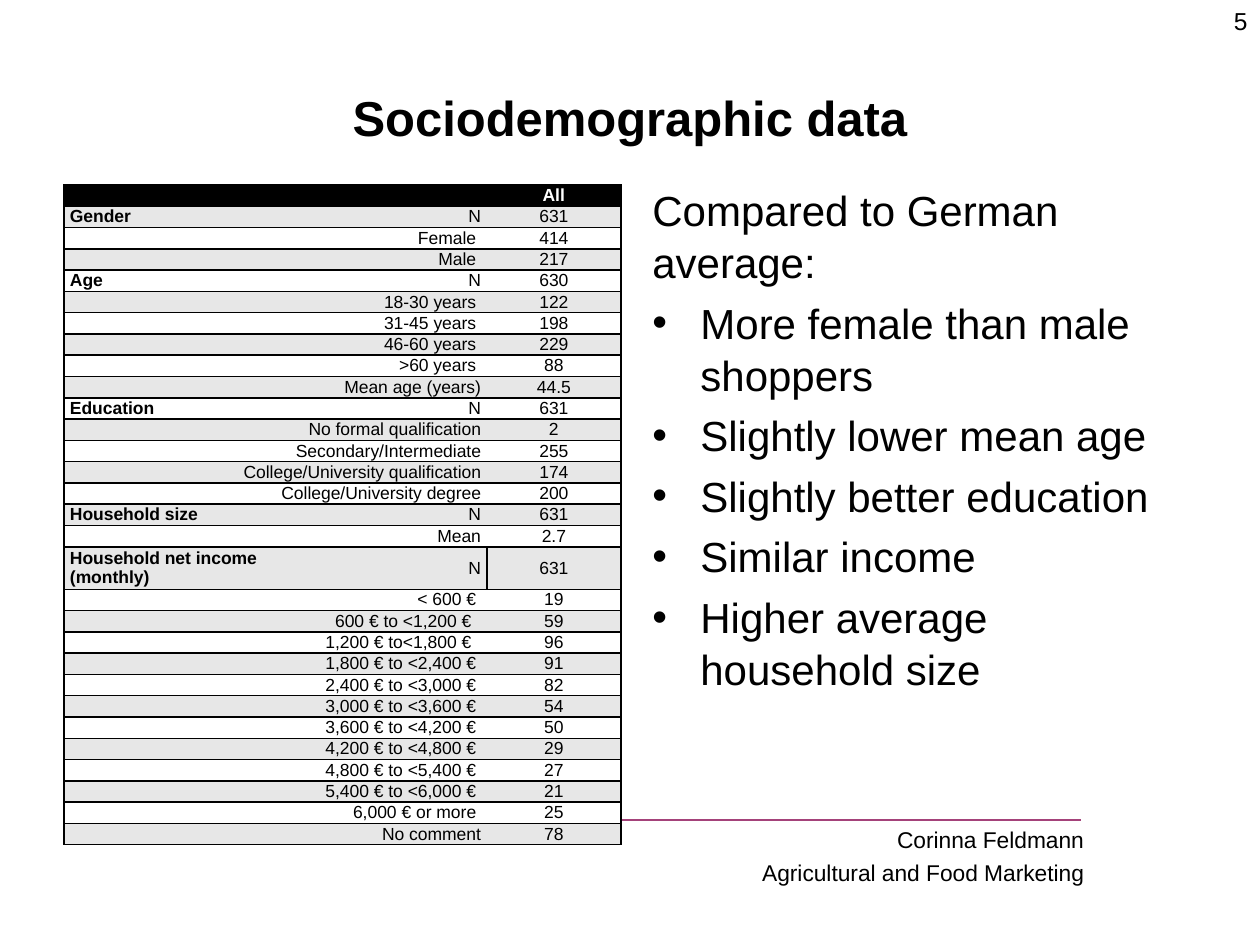
import lxml.etree
import pptx
import pptx.dml.color
import pptx.enum.shapes
import pptx.enum.text
import pptx.oxml.ns
import pptx.util

SCALE = 914400 / 126
NO_GRID = "{2D5ABB26-0587-4C30-8999-92F81FD0307C}"
ALIGN = {
    "l": pptx.enum.text.PP_ALIGN.LEFT,
    "c": pptx.enum.text.PP_ALIGN.CENTER,
    "r": pptx.enum.text.PP_ALIGN.RIGHT,
}
ANCHOR = {
    "t": pptx.enum.text.MSO_ANCHOR.TOP,
    "m": pptx.enum.text.MSO_ANCHOR.MIDDLE,
}

# Label, number of grid columns under the label, item, value
ROWS = [
    ("", 1, "", "All"),
    ("Gender", 1, "N", "631"),
    ("", 1, "Female ", "414"),
    ("", 1, "Male ", "217"),
    ("Age", 1, "N", "630"),
    ("", 1, "18-30 years ", "122"),
    ("", 1, "31-45 years ", "198"),
    ("", 1, "46-60 years ", "229"),
    ("", 1, ">60 years ", "88"),
    ("", 1, "Mean age (years)", "44.5"),
    ("Education", 2, "N", "631"),
    ("", 1, "No formal qualification", "2"),
    ("", 1, "Secondary/Intermediate", "255"),
    ("", 1, "College/University qualification", "174"),
    ("", 1, "College/University degree", "200"),
    ("Household size", 3, "N", "631"),
    ("", 2, "Mean", "2.7"),
    ("Household net income (monthly)", 4, "N", "631"),
    ("", 2, "< 600 € ", "19"),
    ("", 2, "600 € to <1,200 €  ", "59"),
    ("", 2, "1,200 € to<1,800 €  ", "96"),
    ("", 2, "1,800 € to <2,400 € ", "91"),
    ("", 2, "2,400 € to <3,000 € ", "82"),
    ("", 2, "3,000 € to <3,600 € ", "54"),
    ("", 2, "3,600 € to <4,200 € ", "50"),
    ("", 2, "4,200 € to <4,800 € ", "29"),
    ("", 2, "4,800 € to <5,400 € ", "27"),
    ("", 2, "5,400 € to <6,000 € ", "21"),
    ("", 2, "6,000 € or more ", "25"),
    ("", 2, "No comment", "78"),
]
COLS = [155, 36, 36, 36, 160, 134]
POINTS = [
    "More female than male shoppers",
    "Slightly lower mean age",
    "Slightly better education",
    "Similar income",
    "Higher average household size",
]


def px(n):
    return pptx.util.Emu(round(n * SCALE))


def tint(code):
    return pptx.dml.color.RGBColor.from_string(code)


def sub(parent, tag, **attrs):
    return lxml.etree.SubElement(parent, pptx.oxml.ns.qn(tag), attrs)


def write(para, text, size=10, bold=False, color="000000", face="Arial",
          align="l", before=0, lead=None, bullet=False):
    """Fill one paragraph with one formatted run."""
    if bullet:
        props = para._p.get_or_add_pPr()
        props.set("marL", str(px(48)))
        props.set("indent", str(-px(48)))
        sub(props, "a:buFont", typeface=face)
        sub(props, "a:buChar", char="•")
    para.alignment = ALIGN[align]
    para.space_before = pptx.util.Pt(before)
    if lead:
        para.line_spacing = lead
    if not text:
        para._p.get_or_add_endParaRPr().set("sz", str(size * 100))
        return
    run = para.add_run()
    run.text = text
    run.font.name = face
    run.font.size = pptx.util.Pt(size)
    run.font.bold = bold
    run.font.color.rgb = tint(color)


def edge(cell, sides):
    """Draw 1 pt black borders; sides must run in the order L, R, T, B."""
    props = cell._tc.get_or_add_tcPr()
    for side in sides:
        line = sub(props, "a:ln" + side, w="12700")
        sub(sub(line, "a:solidFill"), "a:srgbClr", val="000000")


class Deck:
    ink = "000000"
    paper = "FFFFFF"
    band = "E7E7E7"
    rule = "A4427A"

    def __init__(self):
        self.show = pptx.Presentation()
        self.show.slide_width = px(1260)
        self.show.slide_height = px(945)
        self.slide = self.show.slides.add_slide(self.show.slide_layouts[6])

    def text(self, box, lines, anchor="t", gap=0, **style):
        """Add a text box; each line is a string or a (string, format) pair."""
        frame = self.slide.shapes.add_textbox(*map(px, box)).text_frame
        frame.word_wrap = True
        frame.vertical_anchor = ANCHOR[anchor]
        for i, line in enumerate(lines):
            words, extra = (line, {}) if isinstance(line, str) else line
            para = frame.add_paragraph() if i else frame.paragraphs[0]
            write(para, words, before=gap if i else 0, **style, **extra)

    def line(self, x1, y1, x2, y2):
        kind = pptx.enum.shapes.MSO_CONNECTOR.STRAIGHT
        link = self.slide.shapes.add_connector(kind, *map(px, (x1, y1, x2, y2)))
        link.line.color.rgb = tint(self.rule)
        link.line.width = pptx.util.Pt(0.75)
        sub(link._element.spPr, "a:effectLst")

    def cell(self, cell, text, fill, sides, **style):
        edge(cell, sides)
        cell.fill.solid()
        cell.fill.fore_color.rgb = tint(fill)
        cell.margin_left = cell.margin_right = px(6)
        cell.margin_top = cell.margin_bottom = 0
        cell.vertical_anchor = ANCHOR["m"]
        write(cell.text_frame.paragraphs[0], text, **style)

    def table(self, x, y, high, cols, rows):
        grid = self.slide.shapes.add_table(
            len(rows), len(cols), px(x), px(y), px(sum(cols)), px(high)).table
        grid.first_row = grid.horz_banding = False
        grid._tbl.tblPr[0].text = NO_GRID
        for col, width in zip(grid.columns, cols):
            col.width = px(width)
        last = len(cols) - 1
        wide = last - 1
        unit = high / (len(rows) + 1)
        for r, (label, span, item, value) in enumerate(rows):
            tall = span == wide
            grid.rows[r].height = px(unit * (2 if tall else 1))
            fill = self.band if r % 2 else self.paper
            if r == 0:
                fill = self.ink
            words = {
                0: (label, {"bold": True}),
                span: (item, {"align": "r"}),
                last: (value, {"align": "c", "bold": r == 0,
                               "color": self.ink if r else self.paper}),
            }
            for c in range(len(cols)):
                sides = "LTB" if c == 0 else "TB"
                if c == last or (tall and c == wide):
                    sides = "RTB"
                text, style = words.get(c, ("", {}))
                self.cell(grid.cell(r, c), text, fill, sides, **style)
            for start, end in ((0, span - 1), (span, wide)):
                if end > start:
                    grid.cell(r, start).merge(grid.cell(r, end))


def main():
    deck = Deck()
    deck.text((571, 820, 525, 73),
              ["Corinna Feldmann", "Agricultural and Food Marketing"],
              size=13, align="r", gap=3)
    deck.line(1081, 820, 77, 820)
    deck.text((63, 38, 1134, 157), ["Sociodemographic data"],
              anchor="m", size=28, bold=True, align="c")
    deck.table(64, 185, 660, COLS, ROWS)
    points = [(point, {"bullet": True}) for point in POINTS]
    deck.text((640, 177, 557, 632), ["Compared to German average:"] + points,
              size=24, gap=5, lead=1.03)
    deck.text((1196, 0, 64, 66), ["5"], size=14, align="r")
    deck.show.save("out.pptx")


if __name__ == "__main__":
    main()
